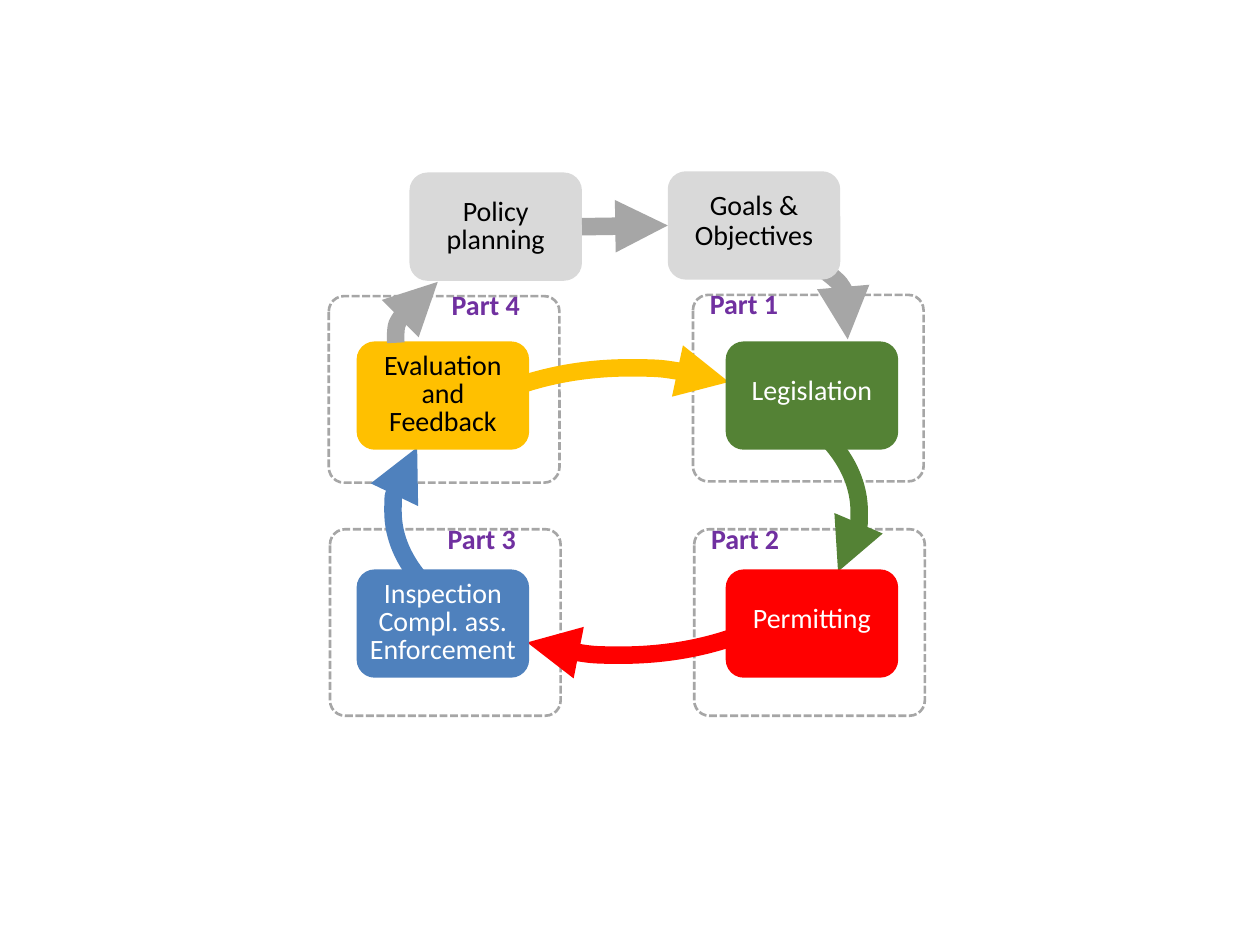
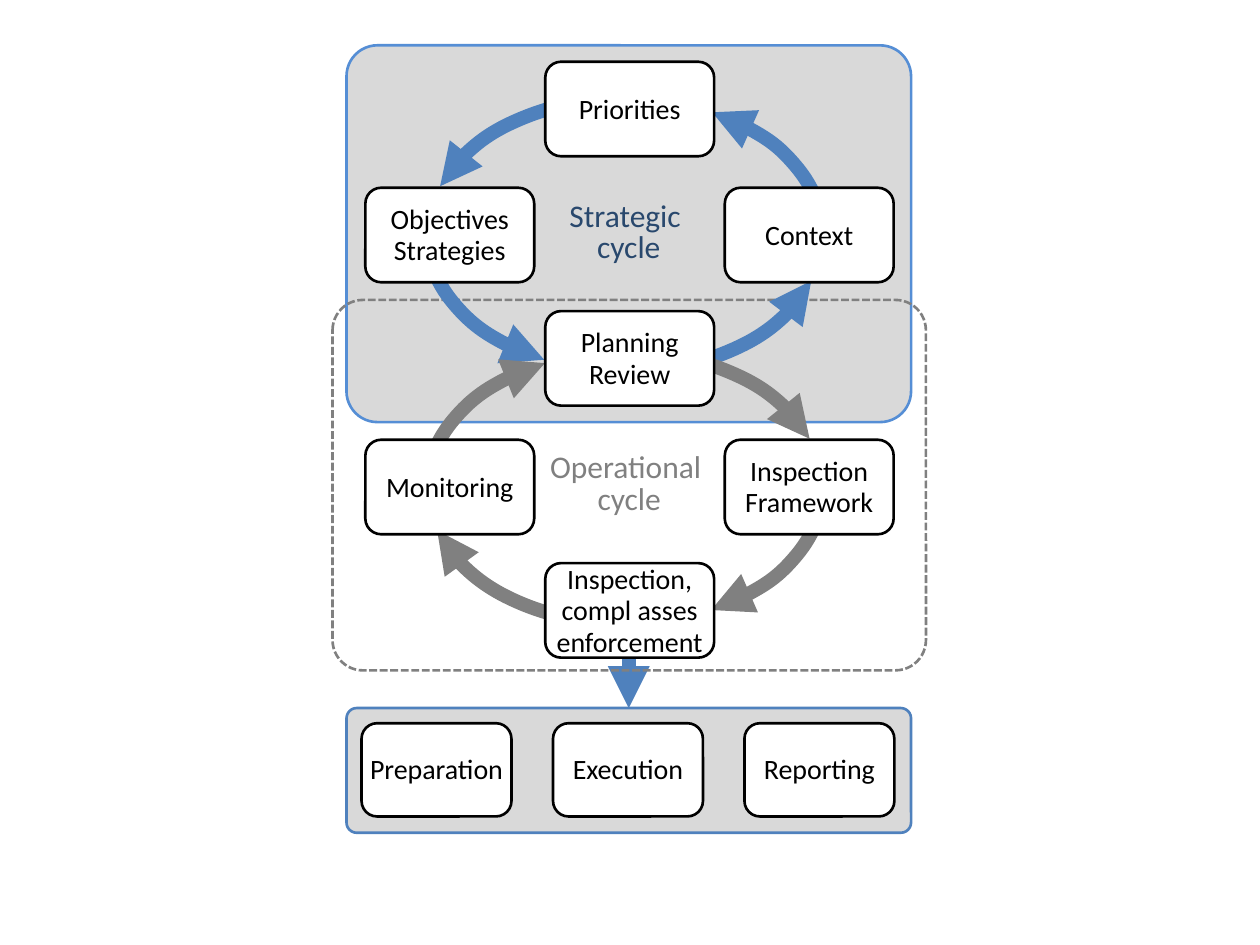
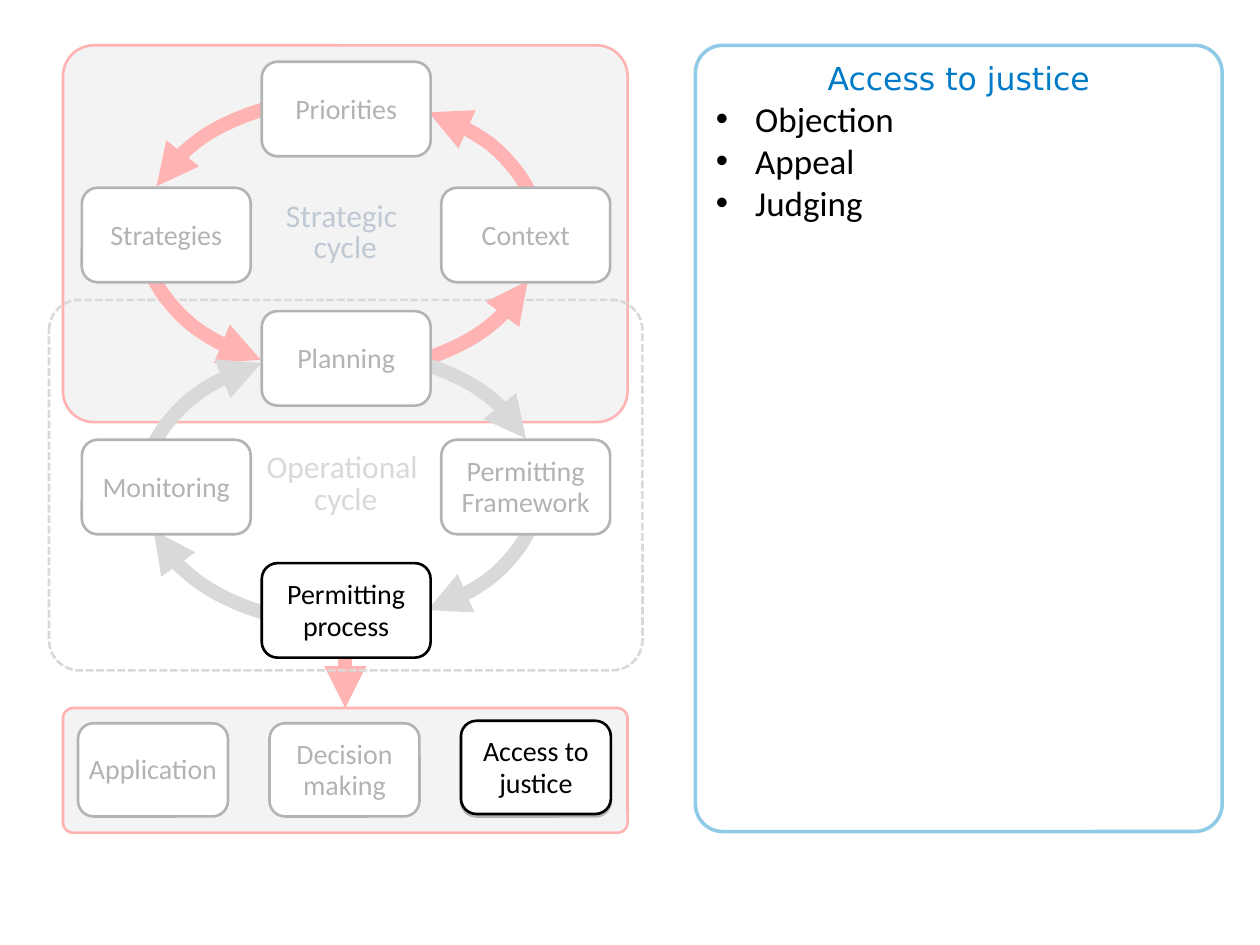
from dataclasses import dataclass

from lxml.etree import SubElement
from pptx import Presentation
from pptx.dml.color import RGBColor
from pptx.enum.dml import MSO_LINE
from pptx.enum.shapes import MSO_CONNECTOR, MSO_SHAPE
from pptx.enum.text import MSO_ANCHOR, PP_ALIGN
from pptx.oxml.ns import qn
from pptx.util import Pt

# Shared colours and sizes
BLACK, WHITE = "000000", "FFFFFF"
BLUE, RED, GREEN, YELLOW = "4F81BD", "FF0000", "548235", "FFC000"
PALE, SILVER, GREY = "D9D9D9", "A6A6A6", "808080"
PURPLE, NAVY = "7030A0", "29486D"
PANEL_ROUNDING = 0.082
STANDARD_ROUNDING = 0.1667
STANDARD_INSETS = (7.2, 3.6, 7.2, 3.6)


@dataclass
class Area:
    """A rectangle in points."""
    left: float
    top: float
    width: float
    height: float

    def lengths(self) -> list:
        return [Pt(v) for v in (self.left, self.top, self.width, self.height)]


@dataclass
class Part:
    label: str
    left: float
    top: float
    align: PP_ALIGN
    right_inset: float = 7.2


@dataclass
class Step:
    lines: tuple
    left: float
    top: float
    fill: str
    color: str
    spacing: float = 16
    before: float = 0
    insets: tuple = (0, 0, 0, 0)


@dataclass
class Sweep:
    """A curved arrow; angles in degrees, clockwise from the right."""
    area: Area
    start: float
    end: float
    color: str
    weight: float = 10
    tip: str = "tailEnd"


def rgb(color: str) -> RGBColor:
    return RGBColor.from_string(color)


def write_text(shape, *lines: str, size=16, font="Calibri", color=BLACK, bold=False,
               align=PP_ALIGN.CENTER, anchor=MSO_ANCHOR.MIDDLE, insets=STANDARD_INSETS,
               spacing=None, before=0, bullet=None) -> None:
    """Add one paragraph per line to the shape's text."""
    frame = shape.text_frame
    frame.word_wrap = True
    frame.vertical_anchor = anchor
    (frame.margin_left, frame.margin_top,
     frame.margin_right, frame.margin_bottom) = [Pt(v) for v in insets]
    for line in lines:
        paragraph = frame.add_paragraph() if frame.text else frame.paragraphs[0]
        paragraph.alignment = align
        paragraph.space_before = Pt(before)
        if spacing:
            paragraph.line_spacing = Pt(spacing)
        if bullet:
            properties = paragraph._p.get_or_add_pPr()
            properties.set("marL", str(Pt(22.5)))
            properties.set("indent", str(-Pt(22.5)))
            SubElement(properties, qn("a:buFont"), typeface="Arial")
            SubElement(properties, qn("a:buChar"), char=bullet)
        run = paragraph.add_run()
        run.text = line
        run.font.size, run.font.name, run.font.bold = Pt(size), font, bold
        run.font.color.rgb = rgb(color)


def add_box(slide, area: Area, fill=None, line=None, weight=1.5, dashed=False,
            rounding=STANDARD_ROUNDING, opacity=None):
    box = slide.shapes.add_shape(MSO_SHAPE.ROUNDED_RECTANGLE, *area.lengths())
    box.shadow.inherit = False
    box.adjustments[0] = rounding
    if fill:
        box.fill.solid()
        box.fill.fore_color.rgb = rgb(fill)
        if opacity:
            tint = box.element.spPr.find(qn("a:solidFill"))[0]
            SubElement(tint, qn("a:alpha"), val=str(opacity * 1000))
    else:
        box.fill.background()
    if line:
        box.line.color.rgb = rgb(line)
        box.line.width = Pt(weight)
        if dashed:
            box.line.dash_style = MSO_LINE.SQUARE_DOT
    else:
        box.line.fill.background()
    return box


def style_arrow(arrow, color: str, weight: float, tip="tailEnd") -> None:
    arrow.line.color.rgb = rgb(color)
    arrow.line.width = Pt(weight)
    SubElement(arrow.element.spPr.find(qn("a:ln")), qn("a:" + tip), type="triangle")


def add_sweep(slide, sweep: Sweep) -> None:
    arc = slide.shapes.add_shape(MSO_SHAPE.ARC, *sweep.area.lengths())
    arc.shadow.inherit = False
    arc.fill.background()
    # Angles are stored in 1/60000 degree, adjustments scale by 100000
    arc.adjustments[0] = sweep.start * 0.6
    arc.adjustments[1] = sweep.end * 0.6
    style_arrow(arc, sweep.color, sweep.weight, sweep.tip)


def add_straight_arrow(slide, start: tuple, target, side: int, color: str, weight: float):
    x, y = (Pt(v) for v in start)
    arrow = slide.shapes.add_connector(MSO_CONNECTOR.STRAIGHT, x, y, x, y)
    arrow.end_connect(target, side)
    style_arrow(arrow, color, weight)
    SubElement(arrow.element.spPr, qn("a:effectLst"))
    return arrow


# Slide 1: regulatory cycle
PARTS = [
    Part("Part 4", 187.9, 169.2, PP_ALIGN.RIGHT, 20),
    Part("Part 3", 188.6, 302.4, PP_ALIGN.RIGHT, 23),
    Part("Part 2", 396.7, 302.4, PP_ALIGN.LEFT),
    Part("Part 1", 396, 168.5, PP_ALIGN.LEFT),
]
STEP_INSETS = (3, 4.3, 3, 4.3)
GOALS = Step(("Goals &", "Objectives"), 381.6, 97.9, PALE, BLACK, 12, 5, STEP_INSETS)
POLICY = Step(("Policy planning",), 234, 98.6, PALE, BLACK, insets=STEP_INSETS)
STEPS = [
    Step(("Permitting",), 414.7, 325.4, RED, WHITE, 12, 5, (0, 4.3, 0, 4.3)),
    Step(("Inspection Compl. ass.", "Enforcement"), 203.8, 325.4, BLUE, WHITE),
    Step(("Evaluation and", "Feedback"), 203.8, 195.1, YELLOW, BLACK),
    Step(("Legislation",), 414.7, 195.1, GREEN, WHITE, 12, 5, STEP_INSETS),
]


def cycle_ring(left: float) -> Area:
    return Area(left, 210.2, 262.8, 164.2)


STEP_SWEEPS = [
    Sweep(cycle_ring(228.2), 339.87, 16.07, GREEN),
    Sweep(cycle_ring(223.9), 18.87, 125.84, RED),
    Sweep(cycle_ring(224.6), 157.52, 197.3, BLUE),
    Sweep(cycle_ring(228.2), 205.84, 307.55, YELLOW),
    Sweep(Area(229, 126, 258.5, 111.6), 316.86, 5.49, SILVER),
]
RETURN_TO_POLICY = Sweep(Area(226.1, 137.5, 259.9, 112.3), 179.01, 197.1, SILVER)


def add_step(slide, step: Step):
    box = add_box(slide, Area(step.left, step.top, 98.6, 61.9), fill=step.fill)
    write_text(box, *step.lines, color=step.color, spacing=step.spacing,
               before=step.before, insets=step.insets)
    return box


def draw_regulatory_cycle(slide) -> None:
    for part in PARTS:
        frame = add_box(slide, Area(part.left, part.top, 131.8, 106.6), line=SILVER,
                        dashed=True, rounding=PANEL_ROUNDING)
        write_text(frame, part.label, color=PURPLE, bold=True, align=part.align,
                   anchor=MSO_ANCHOR.TOP, insets=(7.2, 0, part.right_inset, 3.6),
                   spacing=12, before=5)
    for sweep in STEP_SWEEPS:
        add_sweep(slide, sweep)
    goals, policy = add_step(slide, GOALS), add_step(slide, POLICY)
    for step in STEPS:
        add_step(slide, step)
    policy_to_goals = add_straight_arrow(slide, (332.6, 129.6), goals, 1, SILVER, 10)
    policy_to_goals.begin_connect(policy, 3)
    add_sweep(slide, RETURN_TO_POLICY)


# Slides 2 and 3: strategic and operational cycles
PANEL_LEFT, PANEL_WIDTH = 198, 322.6
LEFT_COLUMN, MIDDLE_COLUMN, RIGHT_COLUMN = 208.8, 311.6, 414.2
ROWS = [35.3, 107.3, 177.8, 251.3, 321.8]
STAGE_LEFT, STAGE_TOP, STAGE_STEP = 206.6, 413.3, 109.4
STRATEGIC_ANGLES = [(305.43, 347.23), (13.85, 61.1), (122.91, 170.09), (194.78, 244.69)]
OPERATIONAL_ANGLES = [(298.21, 345.19), (9.73, 54.85), (117.23, 167.13), (191.68, 237.25)]


@dataclass
class Cycles:
    shift: float
    accent: str
    border: str
    strategic: list   # top, left, right
    operational: list  # left, right, top, bottom
    stages: list


INSPECTION = Cycles(
    0, BLUE, "558ED5",
    [("Priorities",), ("Objectives Strategies",), ("Context",)],
    [("Monitoring",), ("Inspection Framework",), ("Planning", "Review"),
     ("Inspection, compl asses enforcement",)],
    ["Preparation", "Execution", "Reporting"])
PERMITTING = Cycles(
    -162, RED, RED,
    [("Priorities",), ("Strategies",), ("Context",)],
    [("Monitoring",), ("Permitting Framework",), ("Planning",)],
    ["Application", "Decision making", "Access to justice"])


def add_activity(slide, lines, left: float, top: float, width=96.5, height=54) -> None:
    box = add_box(slide, Area(left, top, width, height), fill=WHITE, line=BLACK)
    write_text(box, *lines, spacing=18, insets=(0, 3.6, 0, 3.6))


def add_stage(slide, label: str, left: float, top: float) -> None:
    add_activity(slide, (label,), left, top, 85.7, 53.3)


def add_ring(slide, area: Area, angles: list, color: str, tip: str) -> None:
    for start, end in angles:
        add_sweep(slide, Sweep(area, start, end, color, 8, tip))


def draw_cycles(slide, cycles: Cycles) -> None:
    shift = cycles.shift
    left = PANEL_LEFT + shift

    # Panels and the arrow down to the stages
    stage_panel = add_box(slide, Area(left, 404.6, PANEL_WIDTH, 71.3), fill=PALE,
                          line=cycles.accent, rounding=PANEL_ROUNDING)
    add_straight_arrow(slide, (left + PANEL_WIDTH / 2, 368.6), stage_panel, 0,
                       cycles.accent, 8)
    strategic_panel = add_box(slide, Area(left, 25.9, PANEL_WIDTH, 215.3), fill=PALE,
                              line=cycles.border, rounding=PANEL_ROUNDING)
    write_text(strategic_panel, "Strategic ", "cycle", size=18, color=NAVY, spacing=18)
    operational_panel = add_box(slide, Area(190 + shift, 171.4, 339.1, 211.7), line=GREY,
                                dashed=True, rounding=PANEL_ROUNDING)
    write_text(operational_panel, "Operational ", "cycle", size=18, color=GREY, spacing=18)

    # Strategic cycle
    add_ring(slide, Area(244.1 + shift, 56.2, 226.1, 156.2), STRATEGIC_ANGLES,
             cycles.accent, "headEnd")
    strategic_places = [(MIDDLE_COLUMN, ROWS[0]), (LEFT_COLUMN, ROWS[1]),
                        (RIGHT_COLUMN, ROWS[1])]
    for lines, (x, y) in zip(cycles.strategic, strategic_places):
        add_activity(slide, lines, x + shift, y)

    # Operational cycle
    add_ring(slide, Area(244.1 + shift, 200.9, 226.1, 155.5), OPERATIONAL_ANGLES,
             GREY, "tailEnd")
    operational_places = [(LEFT_COLUMN, ROWS[3]), (RIGHT_COLUMN, ROWS[3]),
                          (MIDDLE_COLUMN, ROWS[2]), (MIDDLE_COLUMN, ROWS[4])]
    for lines, (x, y) in zip(cycles.operational, operational_places):
        add_activity(slide, lines, x + shift, y)

    # Stages
    for index, label in enumerate(cycles.stages):
        add_stage(slide, label, STAGE_LEFT + shift + index * STAGE_STEP, STAGE_TOP)


def draw_access_to_justice(slide) -> None:
    draw_cycles(slide, PERMITTING)

    # Explanation on the right
    explanation = add_box(slide, Area(397.4, 25.9, 301, 449.3), fill=WHITE, line="8FCAE7",
                          weight=2, rounding=0.052)
    write_text(explanation, "Access to justice", size=18, font="DejaVu Sans",
               color="007BC7", anchor=MSO_ANCHOR.TOP)
    write_text(explanation, "Objection", "Appeal", "Judging", size=20, bullet="•",
               align=PP_ALIGN.LEFT, anchor=MSO_ANCHOR.TOP)

    # Veil over the cycles, with the current activities in front
    add_box(slide, Area(15.8, 11.5, 364.3, 478.8), fill=WHITE, rounding=0.052, opacity=70)
    shift = PERMITTING.shift
    add_stage(slide, PERMITTING.stages[2], STAGE_LEFT + shift + 2 * STAGE_STEP,
              STAGE_TOP - 1.4)
    add_activity(slide, ("Permitting process",), MIDDLE_COLUMN + shift, ROWS[4])


def main() -> None:
    deck = Presentation()
    deck.slide_width, deck.slide_height = Pt(720), Pt(540)
    blank = deck.slide_layouts[6]
    draw_regulatory_cycle(deck.slides.add_slide(blank))
    draw_cycles(deck.slides.add_slide(blank), INSPECTION)
    draw_access_to_justice(deck.slides.add_slide(blank))
    deck.save("out.pptx")


if __name__ == "__main__":
    main()
